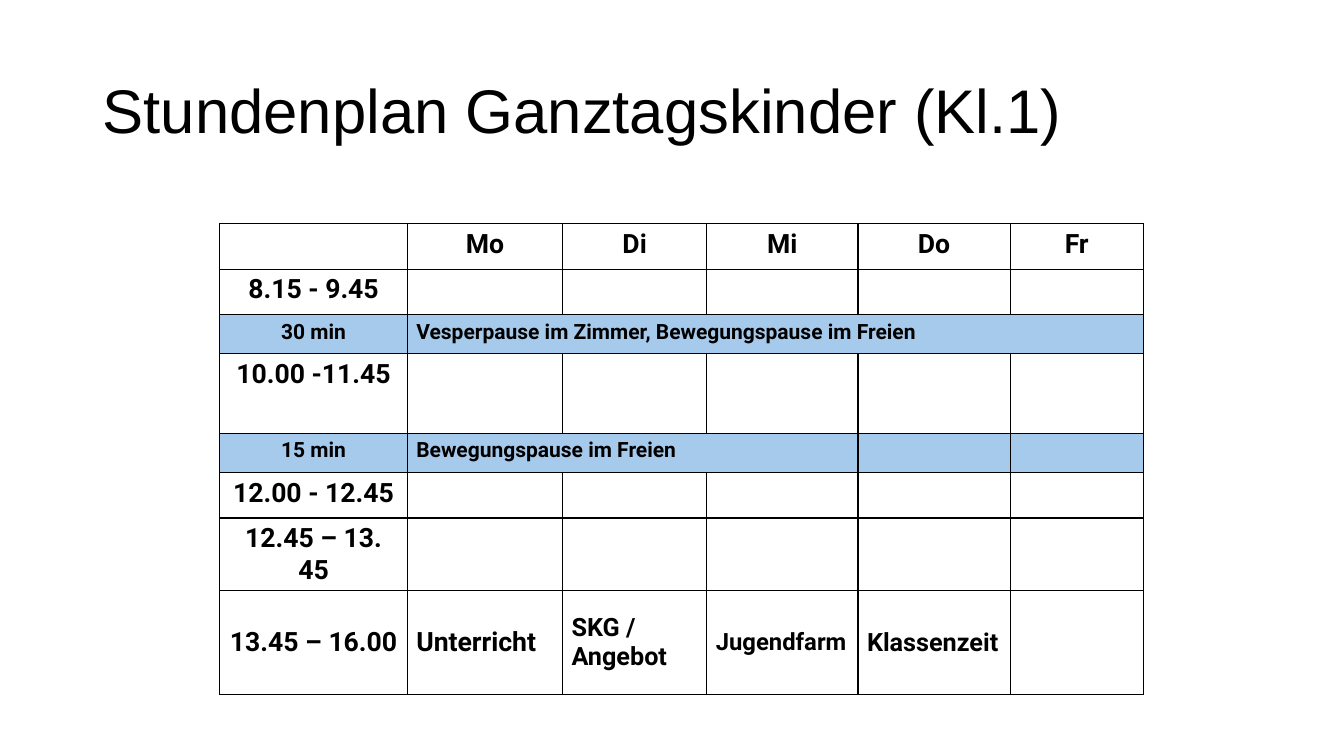
from dataclasses import dataclass

from lxml.etree import SubElement
from pptx import Presentation
from pptx.dml.color import RGBColor
from pptx.enum.text import MSO_ANCHOR, PP_ALIGN
from pptx.oxml.ns import qn
from pptx.util import Inches, Pt


@dataclass(frozen=True)
class Theme:
    ink: RGBColor = RGBColor(0, 0, 0)
    paper: RGBColor = RGBColor(255, 255, 255)
    pause: RGBColor = RGBColor(0xA6, 0xCA, 0xEC)
    title_font: str = "Arial"
    table_font: str = "Roboto"
    title_size: int = 44
    lesson_size: int = 19
    offer_size: int = 18
    farm_size: int = 17
    pause_size: int = 15
    border_width: int = 1


THEME = Theme()
COLUMN_WIDTHS = [1.86, 1.54, 1.43, 1.5, 1.51, 1.32]
ROW_HEIGHTS = [0.45, 0.45, 0.39, 0.79, 0.39, 0.45, 0.52, 1.03]
TIMETABLE = [
    ["", "Mo", "Di", "Mi", "Do", "Fr"],
    ["8.15 - 9.45"],
    ["30 min", "Vesperpause im Zimmer, Bewegungspause im Freien"],
    ["10.00 -11.45"],
    ["15 min", "Bewegungspause im Freien"],
    ["12.00 - 12.45"],
    ["12.45 – 13. 45"],
    ["13.45 – 16.00", "Unterricht", "SKG / Angebot", "Jugendfarm", "Klassenzeit"],
]
PAUSE_LAST_COLUMN = {2: 5, 4: 3}
AFTERNOON_ROW = len(TIMETABLE) - 1
AFTERNOON_SIZES = {2: THEME.offer_size, 3: THEME.farm_size, 4: THEME.offer_size}


def apply_format(target, values):
    for name, value in values.items():
        setattr(target, name, value)


def format_font(font, name, size, bold):
    apply_format(font, {"name": name, "size": Pt(size), "bold": bold})
    font.color.rgb = THEME.ink


def add_borders(cell):
    properties = cell._tc.get_or_add_tcPr()
    for side in ("lnL", "lnR", "lnT", "lnB"):
        line = SubElement(properties, qn(f"a:{side}"), w=str(Pt(THEME.border_width)))
        fill = SubElement(line, qn("a:solidFill"))
        SubElement(fill, qn("a:srgbClr"), val=str(THEME.ink))


def fill_cell(cell, text, size, color, alignment, anchor):
    add_borders(cell)
    cell.fill.solid()
    cell.fill.fore_color.rgb = color
    apply_format(cell, {
        "vertical_anchor": anchor,
        "margin_left": Inches(0.09),
        "margin_right": Inches(0.09),
        "margin_top": Inches(0.05),
        "margin_bottom": Inches(0.05),
    })
    para = cell.text_frame.paragraphs[0]
    para.alignment = alignment
    if text:
        span = para.add_run()
        span.text = text
        format_font(span.font, THEME.table_font, size, True)
    else:
        SubElement(para._p, qn("a:endParaRPr"), sz=str(size * 100))


def add_title(page, left, top, width, height):
    box = page.shapes.title
    apply_format(box, {"left": left, "top": top, "width": width, "height": height})
    frame = box.text_frame
    apply_format(frame, {"word_wrap": True, "vertical_anchor": MSO_ANCHOR.MIDDLE})
    para = frame.paragraphs[0]
    apply_format(para, {"alignment": PP_ALIGN.LEFT, "line_spacing": 0.9})
    span = para.add_run()
    span.text = "Stundenplan Ganztagskinder (Kl.1)"
    format_font(span.font, THEME.title_font, THEME.title_size, False)


def add_timetable(page, left, top, width, height):
    table = page.shapes.add_table(
        len(ROW_HEIGHTS), len(COLUMN_WIDTHS), left, top, width, height
    ).table
    apply_format(table, {"first_row": False, "horz_banding": False})
    for column, column_width in zip(table.columns, COLUMN_WIDTHS):
        column.width = Inches(column_width)
    for row, row_height in zip(table.rows, ROW_HEIGHTS):
        row.height = Inches(row_height)

    for row_index, texts in enumerate(TIMETABLE):
        is_pause = row_index in PAUSE_LAST_COLUMN
        is_afternoon = row_index == AFTERNOON_ROW
        size = THEME.pause_size if is_pause else THEME.lesson_size
        color = THEME.pause if is_pause else THEME.paper
        anchor = MSO_ANCHOR.MIDDLE if is_afternoon else MSO_ANCHOR.TOP
        for column_index in range(len(COLUMN_WIDTHS)):
            text = texts[column_index] if column_index < len(texts) else ""
            centred = column_index == 0 or row_index == 0
            fill_cell(
                table.cell(row_index, column_index),
                text,
                AFTERNOON_SIZES.get(column_index, size) if is_afternoon else size,
                color,
                PP_ALIGN.CENTER if centred else PP_ALIGN.LEFT,
                anchor,
            )
    for row_index, last_column in PAUSE_LAST_COLUMN.items():
        table.cell(row_index, 1).merge(table.cell(row_index, last_column))


def main():
    deck = Presentation()
    apply_format(deck, {"slide_width": Inches(13.33), "slide_height": Inches(7.5)})
    page = deck.slides.add_slide(deck.slide_layouts[5])
    add_title(page, Inches(0.92), Inches(0.4), Inches(11.5), Inches(1.45))
    add_timetable(
        page, Inches(2.18), Inches(2.22),
        Inches(sum(COLUMN_WIDTHS)), Inches(sum(ROW_HEIGHTS)),
    )
    deck.save("out.pptx")


if __name__ == "__main__":
    main()
